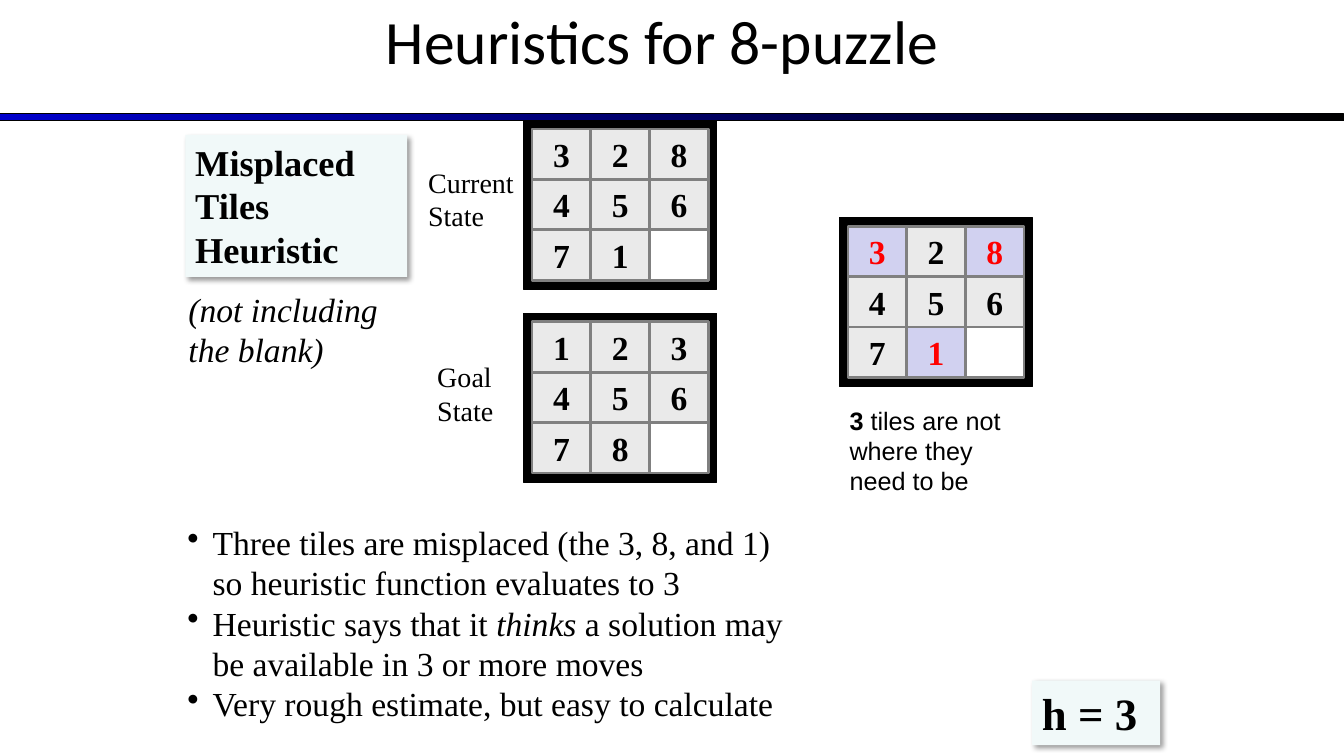
import pptx
import pptx.util
import pptx.dml.color
import pptx.enum.shapes
import pptx.enum.text
import pptx.oxml
import pptx.oxml.ns

Cm, Pt = pptx.util.Cm, pptx.util.Pt
RGBColor = pptx.dml.color.RGBColor
RECT = pptx.enum.shapes.MSO_SHAPE.RECTANGLE
ANCHOR = pptx.enum.text.MSO_ANCHOR
ALIGN = pptx.enum.text.PP_ALIGN
AUTO_SIZE = pptx.enum.text.MSO_AUTO_SIZE

BLACK = RGBColor(0x00, 0x00, 0x00)
WHITE = RGBColor(0xFF, 0xFF, 0xFF)
BLUE = RGBColor(0x00, 0x00, 0xCC)
RED = RGBColor(0xFF, 0x00, 0x00)
MINT = RGBColor(0xF1, 0xF9, 0xF9)
TILE_GREY = RGBColor(0xEA, 0xEA, 0xEA)
TILE_LILAC = RGBColor(0xD1, 0xD1, 0xF0)
EDGE_GREY = RGBColor(0x80, 0x80, 0x80)
SERIF = "Times New Roman"
SHADOW = (
    f'<a:effectLst {pptx.oxml.ns.nsdecls("a")}>'
    '<a:outerShdw blurRad="50800" dist="38100" dir="2700000" algn="tl" rotWithShape="0">'
    '<a:srgbClr val="000000"><a:alpha val="40000"/></a:srgbClr>'
    '</a:outerShdw></a:effectLst>'
)


def add_rect(shapes, box, fill, line=None, line_width=0.75):
    s = shapes.add_shape(RECT, *[Cm(v) for v in box])
    s.shadow.inherit = False
    s.fill.solid()
    s.fill.fore_color.rgb = fill
    if line is None:
        s.line.fill.background()
    else:
        s.line.color.rgb = line
        s.line.width = Pt(line_width)
    return s


def write(s, paragraphs, size, font=SERIF, color=BLACK, align=ALIGN.LEFT, anchor=ANCHOR.TOP):
    """Each paragraph is a list of (text, style) with style '', 'b' or 'i'."""
    tf = s.text_frame
    tf.word_wrap = True
    tf.vertical_anchor = anchor
    for i, runs in enumerate(paragraphs):
        p = tf.add_paragraph() if i else tf.paragraphs[0]
        p.alignment = align
        for text, style in runs:
            r = p.add_run()
            r.text = text
            r.font.name = font
            r.font.size = Pt(size)
            r.font.color.rgb = color
            r.font.bold = style == "b"
            r.font.italic = style == "i"
    return tf


prs = pptx.Presentation()
prs.slide_width, prs.slide_height = Cm(33.87), Cm(19.05)
slide = prs.slides.add_slide(prs.slide_layouts[6])
shapes = slide.shapes

# Rule under the title
rule = add_rect(shapes, (0, 2.87, 33.87, 0.18), BLUE, BLACK)
rule.fill.gradient()
rule.fill.gradient_angle = 0
for stop, color, position in zip(rule.fill.gradient_stops, (BLUE, BLACK), (0, 1)):
    stop.color.rgb = color
    stop.position = position

# Title
title = shapes.add_textbox(Cm(6.07), Cm(-0.58), Cm(21.59), Cm(3.18))
write(title, [[("Heuristics for 8-puzzle ", "")]], 44, "Calibri",
      align=ALIGN.CENTER, anchor=ANCHOR.MIDDLE)

# Shadowed boxes: heuristic name and its value
for box, lines, size in [
    ((4.67, 3.4, 5.59, 3.58), ["Misplaced Tiles", "Heuristic"], 26),
    ((26.01, 17.15, 3.23, 1.63), ["h = 3"], 32),
]:
    s = add_rect(shapes, box, MINT)
    s.shadow.inherit = True
    s._element.spPr.append(pptx.oxml.parse_xml(SHADOW))
    write(s, [[(line, "b")] for line in lines], size)

# Puzzle boards: left, top, rows, misplaced tiles
TILE_W, TILE_H = 1.48, 1.27
for left, top, rows, misplaced in [
    (13.19, 3.04, ["328", "456", "71 "], ""),
    (13.19, 7.9, ["123", "456", "78 "], ""),
    (21.15, 5.49, ["328", "456", "71 "], "381"),
]:
    board = shapes.add_group_shape()
    add_rect(board.shapes, (left, top, 4.88, 4.25), BLACK, BLACK)
    for row, digits in enumerate(rows):
        for col, digit in enumerate(digits):
            blank, wrong = digit == " ", digit in misplaced
            fill = WHITE if blank else TILE_LILAC if wrong else TILE_GREY
            box = (left + 0.22 + col * TILE_W, top + 0.21 + row * TILE_H, TILE_W, TILE_H)
            tile = add_rect(board.shapes, box, fill, EDGE_GREY, 2)
            if not blank:
                tf = write(tile, [[(digit, "b")]], 24, color=RED if wrong else BLACK,
                           align=ALIGN.CENTER, anchor=ANCHOR.MIDDLE)
                tf.margin_top = tf.margin_bottom = 0

# Captions
for box, runs, size, font in [
    ((10.54, 4.04, 3.3, 1.96), [("Current State", "")], 20, SERIF),
    ((10.77, 8.94, 2.95, 1.96), [("Goal State", "")], 20, SERIF),
    ((4.5, 7.16, 5.94, 2.31), [("(not including the blank)", "i")], 24, SERIF),
    ((21.16, 10.08, 5.11, 2.57),
     [("3", "b"), (" tiles are not where they need to be", "")], 18, "Arial"),
]:
    caption = shapes.add_textbox(*[Cm(v) for v in box])
    write(caption, [runs], size, font).auto_size = AUTO_SIZE.SHAPE_TO_FIT_TEXT

# Explanation bullets
notes = shapes.add_textbox(Cm(4.47), Cm(13.03), Cm(16.08), Cm(5.38))
tf = write(notes, [
    [("Three tiles are misplaced (the 3, 8, and 1) so heuristic function evaluates to 3", "")],
    [("Heuristic says that it ", ""), ("thinks", "i"),
     (" a solution may be available in 3 or more moves", "")],
    [("Very rough estimate, but easy to calculate", "")],
], 24)
tf.auto_size = AUTO_SIZE.SHAPE_TO_FIT_TEXT
for p in tf.paragraphs:
    pPr = p._p.get_or_add_pPr()
    pPr.set("marL", str(Cm(0.64)))
    pPr.set("indent", str(-Cm(0.64)))
    pPr.append(pptx.oxml.parse_xml(f'<a:buChar {pptx.oxml.ns.nsdecls("a")} char="•"/>'))

prs.save("out.pptx")
